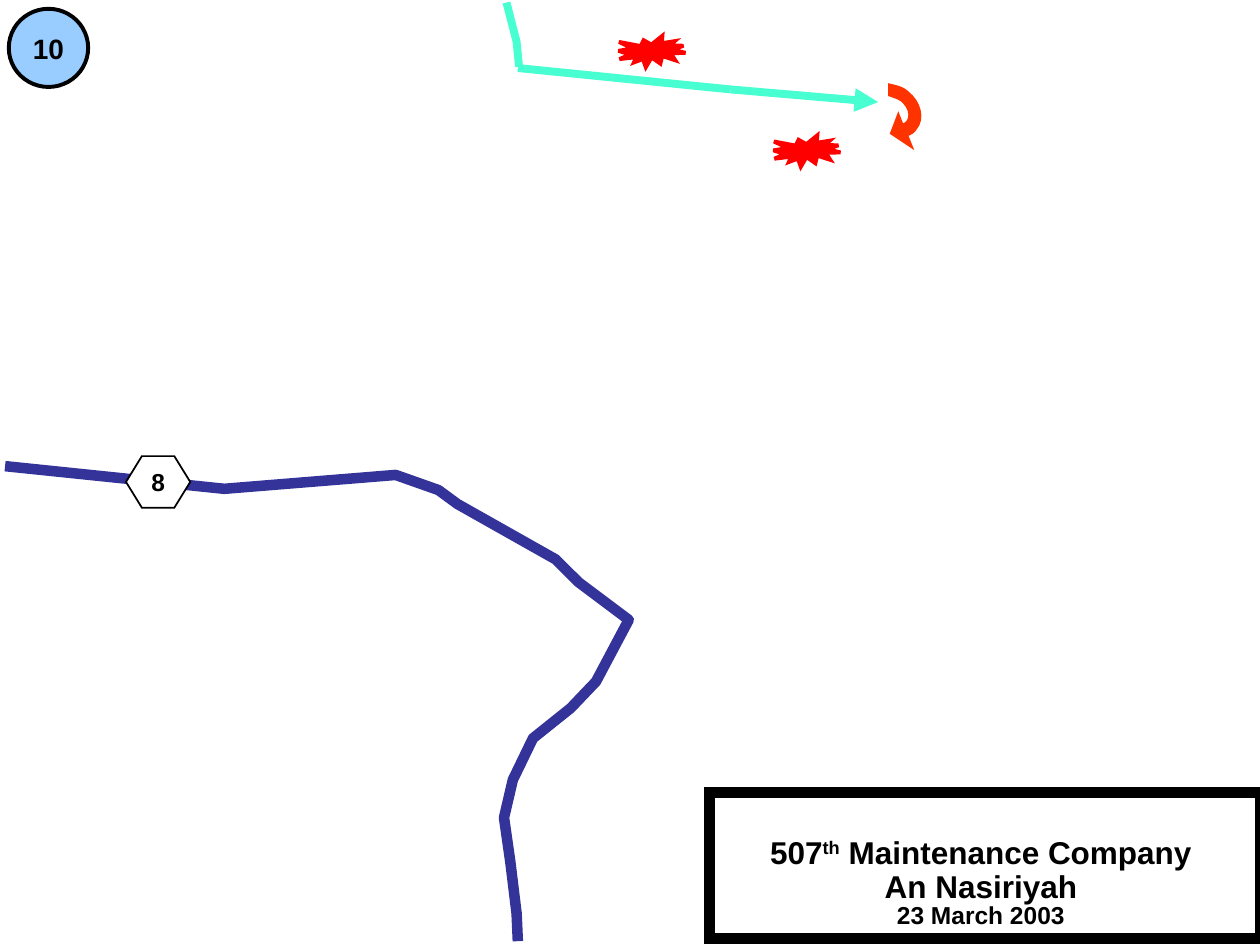
"""Build a map slide of the 507th Maintenance Company's route."""
from dataclasses import dataclass

from lxml import etree
from pptx import Presentation
from pptx.dml.color import RGBColor
from pptx.enum import shapes, text
from pptx.oxml import ns
from pptx.util import Inches, Pt


@dataclass(frozen=True)
class Theme:
    """Hold the colours, font and type sizes of the slide."""
    route: str = "47FFD1"
    road: str = "333399"
    turn: str = "FF3300"
    burst: str = "FF0000"
    badge: str = "99CCFF"
    paper: str = "FFFFFF"
    ink: str = "000000"
    font: str = "Arial"
    title: int = 18
    number: int = 16
    label: int = 14


THEME = Theme()
ROUTE_BEND = [(4.02, 0.02), (4.1, 0.33), (4.12, 0.53)]
ROUTE_LEGS = [(4.11, 0.54), (5.8, 0.71), (6.97, 0.81)]
BURSTS = [(6.14, 1.08), (4.91, 0.29)]
ROAD = [(0.04, 3.7), (1.78, 3.88), (3.14, 3.77), (3.48, 3.89), (3.63, 4),
        (4.41, 4.44), (4.59, 4.62), (4.99, 4.92), (4.73, 5.41), (4.53, 5.62),
        (4.23, 5.86), (4.07, 6.19), (4, 6.49), (4.05, 6.84), (4.1, 7.25),
        (4.11, 7.47)]
TURN_INNER = [[(7.15, 1.02), (7.18, 1.01), (7.2, 1), (7.22, 0.98)],
              [(7.22, 0.98), (7.26, 0.92), (7.24, 0.84), (7.17, 0.78)],
              [(7.17, 0.78), (7.14, 0.76), (7.11, 0.75), (7.08, 0.74)]]
TURN_OUTER = [[(7.08, 0.7), (7.12, 0.71), (7.16, 0.72), (7.19, 0.75)],
              [(7.19, 0.75), (7.28, 0.82), (7.31, 0.94), (7.25, 1.01)],
              [(7.25, 1.01), (7.23, 1.04), (7.2, 1.05), (7.17, 1.06)]]
TURN_HEAD = [(7.19, 1.11), (7.1, 1.05), (7.13, 0.97)]


def rgb(color):
    """Return a colour object for a hex string."""
    return RGBColor.from_string(color)


def set_line(line, color, width):
    """Set the colour and width of a line."""
    line.color.rgb = rgb(color)
    line.width = Pt(width)


def add_line_part(sp, tag, **attrs):
    """Append a join or arrowhead element to the line of a shape."""
    ln = sp.line._get_or_add_ln()
    etree.SubElement(ln, ns.qn(tag), **attrs)


def style_outline(sp, fill, color, width):
    """Give a closed shape its fill and a sharp-cornered outline."""
    sp.shadow.inherit = False
    sp.fill.solid()
    sp.fill.fore_color.rgb = rgb(fill)
    set_line(sp.line, color, width)
    add_line_part(sp, "a:miter", lim="800000")


def add_preset(s, kind, box, fill, color, width, rotation=0):
    """Add a filled preset shape."""
    sp = s.shapes.add_shape(kind, *map(Inches, box))
    sp.rotation = rotation
    style_outline(sp, fill, color, width)
    return sp


def add_path(s, points, close=False):
    """Add a freeform through points given in inches."""
    pts = [(Inches(x), Inches(y)) for x, y in points]
    builder = s.shapes.build_freeform(*pts[0])
    builder.add_line_segments(pts[1:], close=close)
    return builder.convert_to_shape()


def add_route(s, points, color, width):
    """Add an open, unfilled polyline."""
    sp = add_path(s, points)
    sp.shadow.inherit = False
    sp.fill.background()
    set_line(sp.line, color, width)


def add_leg(s, start, end, arrow):
    """Add a straight leg of the route."""
    ends = map(Inches, (*start, *end))
    sp = s.shapes.add_connector(shapes.MSO_CONNECTOR.STRAIGHT, *ends)
    set_line(sp.line, THEME.route, 4.5)
    etree.SubElement(sp._element.spPr, ns.qn("a:effectLst"))
    if arrow:
        add_line_part(sp, "a:tailEnd", type="triangle")


def sample_curve(curve, steps=8):
    """Return points along a cubic curve."""
    points = []
    for i in range(steps + 1):
        t = i / steps
        weights = ((1 - t) ** 3, 3 * t * (1 - t) ** 2, 3 * t * t * (1 - t), t ** 3)
        points.append(tuple(sum(w * v for w, v in zip(weights, axis))
                            for axis in zip(*curve)))
    return points


def add_turn(s):
    """Add the curved arrow that marks the turn back."""
    points = [p for c in TURN_INNER + TURN_OUTER for p in sample_curve(c)]
    sp = add_path(s, points + TURN_HEAD, close=True)
    style_outline(sp, THEME.turn, THEME.turn, 4.5)


def add_run(p, content, size, superscript=False):
    """Add a bold run to a paragraph."""
    r = p.add_run()
    r.text = content
    r.font.name = THEME.font
    r.font.size = Pt(size)
    r.font.bold = True
    r.font.color.rgb = rgb(THEME.ink)
    if superscript:
        r.font._element.set("baseline", "30000")


def add_label(sp, content, size, margins=(0.1, 0.05)):
    """Centre a label inside a shape."""
    tf = sp.text_frame
    tf.margin_left = tf.margin_right = Inches(margins[0])
    tf.margin_top = tf.margin_bottom = Inches(margins[1])
    tf.vertical_anchor = text.MSO_ANCHOR.MIDDLE
    p = tf.paragraphs[0]
    p.alignment = text.PP_ALIGN.CENTER
    add_run(p, content, size)


def add_title(s):
    """Add the three title lines."""
    box = s.shapes.add_textbox(*map(Inches, (5.91, 6.29, 3.75, 1.09)))
    tf = box.text_frame
    tf.word_wrap = True
    tf.margin_top, tf.margin_bottom = Inches(0.35), 0
    lines = [(["507", "th", " Maintenance Company"], THEME.title, 19.4),
             (["An Nasiriyah"], THEME.title, 19.4),
             (["23 March 2003"], THEME.label, 14.4)]
    for i, (parts, size, spacing) in enumerate(lines):
        p = tf.add_paragraph() if i else tf.paragraphs[0]
        p.alignment = text.PP_ALIGN.CENTER
        p.line_spacing = Pt(spacing)
        for part in parts:
            add_run(p, part, size, superscript=part == "th")


def main():
    """Build and save the slide."""
    prs = Presentation()
    prs.slide_width, prs.slide_height = Inches(10), Inches(7.5)
    s = prs.slides.add_slide(prs.slide_layouts[6])
    kind = shapes.MSO_SHAPE

    for start, end in zip(ROUTE_LEGS, ROUTE_LEGS[1:]):
        add_leg(s, start, end, arrow=end == ROUTE_LEGS[-1])
    add_route(s, ROUTE_BEND, THEME.route, 4.5)
    add_turn(s)
    for x, y in BURSTS:
        add_preset(s, kind.EXPLOSION1, (x, y, 0.53, 0.24),
                   THEME.burst, THEME.burst, 2.25, rotation=356.1)

    add_preset(s, kind.RECTANGLE, (5.63, 6.29, 4.37, 1.16),
               THEME.paper, THEME.ink, 6)
    add_title(s)

    add_route(s, ROAD, THEME.road, 6)
    sign = add_preset(s, kind.HEXAGON, (1, 3.62, 0.51, 0.41),
                      THEME.paper, THEME.ink, 1)
    sign.adjustments[0] = 0.308
    add_label(sign, "8", THEME.label, margins=(0.07, 0.03))
    badge = add_preset(s, kind.OVAL, (0.07, 0.07, 0.63, 0.62),
                       THEME.badge, THEME.ink, 2.25)
    add_label(badge, "10", THEME.number)
    prs.save("out.pptx")


if __name__ == "__main__":
    main()
